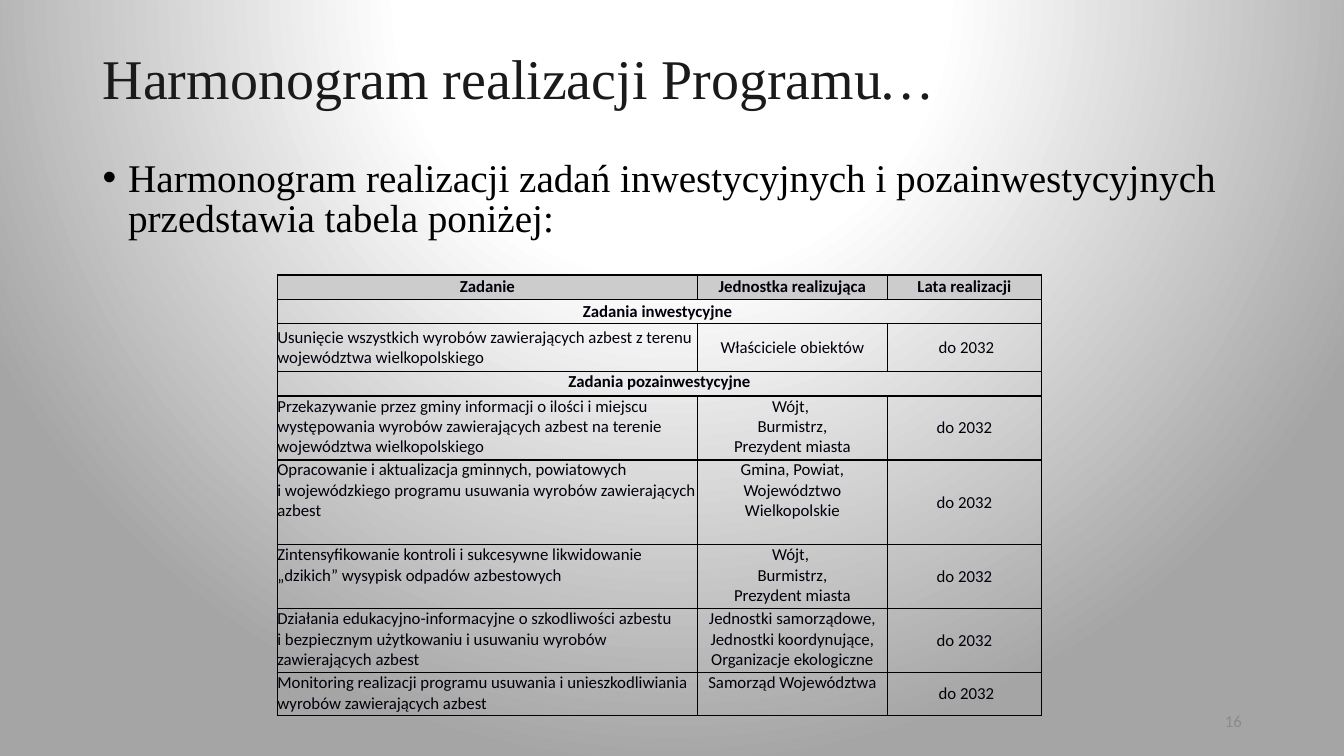
from copy import deepcopy

from lxml.etree import SubElement
from pptx import Presentation
from pptx.dml.color import RGBColor
from pptx.enum.text import MSO_ANCHOR, PP_ALIGN
from pptx.oxml import parse_xml
from pptx.oxml.ns import nsdecls, qn
from pptx.util import Cm, Pt

SERIF, SANS = "Times New Roman", "Calibri"
MAYORS = "Wójt, \nBurmistrz,\nPrezydent miasta"

# Row height in cm, then the cell texts; a single text spans the whole row
SCHEDULE = [
    (0.61, "Zadanie", "Jednostka realizująca", "Lata realizacji"),
    (0.61, "Zadania inwestycyjne "),
    (1.22, "Usunięcie wszystkich wyrobów zawierających azbest z terenu "
           "województwa wielkopolskiego", "Właściciele obiektów", " do 2032"),
    (0.61, "Zadania pozainwestycyjne"),
    (1.61, "Przekazywanie przez gminy informacji o ilości i miejscu "
           "występowania wyrobów zawierających azbest na terenie "
           "województwa wielkopolskiego", MAYORS, "do 2032"),
    (2.14, "Opracowanie i aktualizacja gminnych, powiatowych \v"
           "i wojewódzkiego programu usuwania wyrobów zawierających azbest",
     "Gmina, Powiat, Województwo Wielkopolskie", "do 2032"),
    (1.61, "Zintensyfikowanie kontroli i sukcesywne likwidowanie „dzikich” "
           "wysypisk odpadów azbestowych", MAYORS, "do 2032"),
    (1.61, "Działania edukacyjno-informacyjne o szkodliwości azbestu \v"
           "i bezpiecznym użytkowaniu i usuwaniu wyrobów zawierających azbest",
     "Jednostki samorządowe,\nJednostki koordynujące,\n"
     "Organizacje ekologiczne", "do 2032"),
    (1.07, "Monitoring realizacji programu usuwania i unieszkodliwiania "
           "wyrobów zawierających azbest", "Samorząd Województwa", " do 2032"),
]
COLUMN_WIDTHS = (10.59, 4.78, 3.89)
MIDDLE_ROWS = 3  # rows from the top whose text is centred vertically


def rgb(color):
    return RGBColor.from_string(color)


def write(frame, text, size=12, font=SANS, color="00000A", bold=False,
          align=PP_ALIGN.LEFT, spacing=None, bullet=None, italic_tail=""):
    """Fill a text frame: \\n starts a paragraph, \\v breaks a line."""
    for index, line in enumerate(text.split("\n")):
        paragraph = frame.add_paragraph() if index else frame.paragraphs[0]
        paragraph.text = line
        paragraph.alignment = align
        if spacing:
            paragraph.line_spacing = spacing
        if bullet:
            properties = paragraph._p.get_or_add_pPr()
            properties.set("marL", str(Cm(0.64)))
            properties.set("indent", str(-Cm(0.64)))
            SubElement(properties, qn("a:buFont"), typeface="Arial")
            SubElement(properties, qn("a:buChar"), char=bullet)
        if italic_tail:
            tail = paragraph.add_run()
            tail.text = italic_tail
            tail.font.italic = True
        for run in paragraph.runs:
            run.font.size = Pt(size)
            run.font.name = font
            run.font.bold = bold
            run.font.color.rgb = rgb(color)
        # Line breaks take the size of the text around them
        for line_break in paragraph._p.findall(qn("a:br")):
            line_break.append(deepcopy(paragraph.runs[0]._r.rPr))


def add_text(slide, left, top, width, height, text, anchor=MSO_ANCHOR.TOP,
             **text_format):
    box = slide.shapes.add_textbox(Cm(left), Cm(top), Cm(width), Cm(height))
    box.text_frame.word_wrap = True
    box.text_frame.vertical_anchor = anchor
    write(box.text_frame, text, **text_format)


def set_background(slide):
    slide.background.fill.gradient()
    plain = next(slide.element.iter(qn("a:gradFill")))
    stops = "".join(
        f'<a:gs pos="{position * 1000}"><a:srgbClr val="{color}"/></a:gs>'
        for position, color in ((0, "FFFFFF"), (35, "FFFFFF"), (100, "A5A5A5")))
    radial = parse_xml(
        f'<a:gradFill {nsdecls("a")} rotWithShape="1"><a:gsLst>{stops}</a:gsLst>'
        '<a:path path="circle"><a:fillToRect l="50000" t="-80000" r="50000" '
        'b="180000"/></a:path></a:gradFill>')
    plain.getparent().replace(plain, radial)


def format_cell(cell, fill=None):
    cell.margin_left = cell.margin_right = 0
    cell.margin_top = cell.margin_bottom = 0
    properties = cell._tc.get_or_add_tcPr()
    for side in ("lnL", "lnR", "lnT", "lnB"):
        border = SubElement(properties, qn(f"a:{side}"), w=str(Pt(1)))
        solid = SubElement(border, qn("a:solidFill"))
        SubElement(solid, qn("a:srgbClr"), val="000000")
    if fill:
        cell.fill.solid()
        cell.fill.fore_color.rgb = rgb(fill)
    else:
        cell.fill.background()


def add_schedule(slide, left, top):
    heights = [row[0] for row in SCHEDULE]
    table = slide.shapes.add_table(
        len(SCHEDULE), len(COLUMN_WIDTHS), Cm(left), Cm(top),
        Cm(sum(COLUMN_WIDTHS)), Cm(sum(heights))).table
    table.first_row = table.horz_banding = False
    for column, width in zip(table.columns, COLUMN_WIDTHS):
        column.width = Cm(width)
    last = len(COLUMN_WIDTHS) - 1

    for r, (height, *texts) in enumerate(SCHEDULE):
        table.rows[r].height = Cm(height)
        heading = r == 0 or len(texts) == 1
        for c in range(len(COLUMN_WIDTHS)):
            format_cell(table.cell(r, c), "CCCCCC" if r == 0 else None)
        if len(texts) == 1:
            table.cell(r, 0).merge(table.cell(r, last))
        for c, text in enumerate(texts):
            cell = table.cell(r, c)
            centred = r < MIDDLE_ROWS or c == last
            cell.vertical_anchor = MSO_ANCHOR.MIDDLE if centred else MSO_ANCHOR.TOP
            write(cell.text_frame, text, bold=heading,
                  align=PP_ALIGN.CENTER if heading or c else PP_ALIGN.LEFT)


def main():
    deck = Presentation()
    deck.slide_width, deck.slide_height = Cm(33.87), Cm(19.05)
    slide = deck.slides.add_slide(deck.slide_layouts[6])
    set_background(slide)

    # Title and introduction
    add_text(slide, 2.34, 1.02, 29.21, 2.06, "Harmonogram realizacji Programu",
             anchor=MSO_ANCHOR.MIDDLE, italic_tail="…", size=40, font=SERIF,
             color="1A1A1A", spacing=0.9)
    add_text(slide, 2.34, 3.91, 29.21, 2.18,
             "Harmonogram realizacji zadań inwestycyjnych i "
             "pozainwestycyjnych przedstawia tabela poniżej:",
             size=28, font=SERIF, color="000000", spacing=0.85, bullet="•")

    # Schedule of tasks
    add_schedule(slide, 6.99, 6.93)

    # Page number
    add_text(slide, 23.93, 17.66, 7.62, 1.01, "16", anchor=MSO_ANCHOR.MIDDLE,
             color="8B8B8B", align=PP_ALIGN.RIGHT)

    deck.save("out.pptx")


if __name__ == "__main__":
    main()
